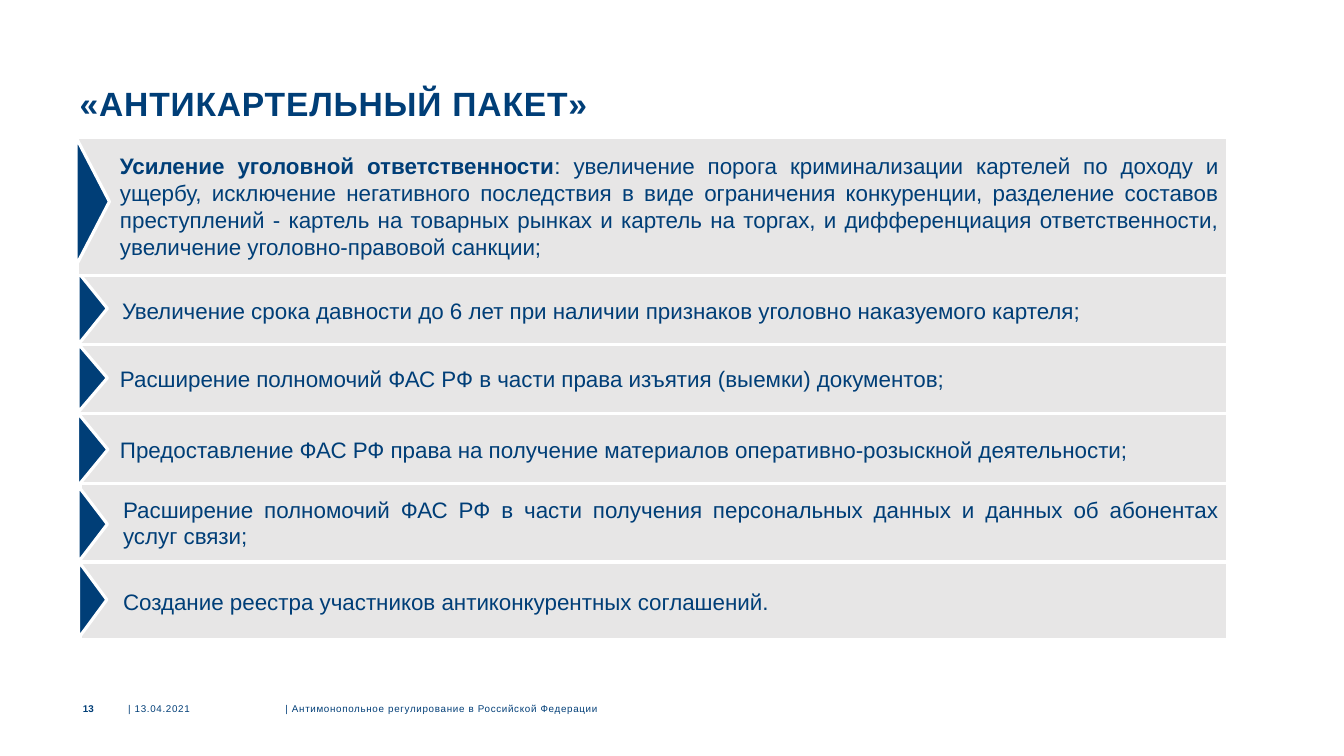
from lxml import etree
from pptx import Presentation
from pptx.dml.color import RGBColor
from pptx.enum import shapes, text
from pptx.util import Inches, Pt

# Content
TITLE = "«АНТИКАРТЕЛЬНЫЙ ПАКЕТ»"

# Footer: runs, left, width, format
FOOTER = [
    ("13", 0.79, 0.14, dict(bold=True, align=text.PP_ALIGN.RIGHT)),
    ("| 13.04.2021", 1.27, 1.56, dict(spacing=0.5)),
    ("| Антимонопольное регулирование в Российской Федерации", 2.83, 6.02,
     dict(spacing=0.5)),
]

# Measures: bold lead, text, (bar left, top, height), (marker middle, span, depth)
MEASURES = [
    ("", "Увеличение срока давности до 6 лет при наличии признаков "
     "уголовно наказуемого картеля;",
     (0.79, 2.73, 0.70), (3.06, 0.72, 0.29)),
    ("", "Расширение полномочий ФАС РФ в части права изъятия (выемки) документов;",
     (0.77, 3.42, 0.68), (3.75, 0.68, 0.29)),
    ("", "Предоставление ФАС РФ права на получение материалов "
     "оперативно-розыскной деятельности;",
     (0.77, 4.10, 0.71), (4.46, 0.73, 0.30)),
    ("", "Расширение полномочий ФАС РФ в части получения персональных данных "
     "и данных об абонентах услуг связи;",
     (0.80, 4.80, 0.77), (5.20, 0.76, 0.29)),
    ("", "Создание реестра участников антиконкурентных соглашений.",
     (0.80, 5.58, 0.77), (5.95, 0.76, 0.28)),
    ("Усиление уголовной ответственности",
     ": увеличение порога криминализации картелей по доходу и ущербу, "
     "исключение негативного последствия в виде ограничения конкуренции, "
     "разделение составов преступлений - картель на товарных рынках и картель "
     "на торгах, и дифференциация ответственности, увеличение "
     "уголовно-правовой санкции;",
     (0.77, 1.36, 1.37), (2.00, 1.27, 0.33)),
]

THEME = dict(
    font="Arial", navy=RGBColor(0x00, 0x3E, 0x77),
    grey=RGBColor(0xE7, 0xE6, 0xE6), white=RGBColor(0xFF, 0xFF, 0xFF),
    title=24, body=16, footer=7, outline=2.25,
)
BAR_RIGHT = 12.18
MARKER_CENTRE = 0.92
BAR_INSETS = (0.42, 0.05, 0.09, 0.05)


def write(shape, words, size, lead="", bold=False, spacing=0, line=None,
          align=text.PP_ALIGN.LEFT, anchor=text.MSO_ANCHOR.MIDDLE,
          insets=(0, 0, 0, 0)):
    frame = shape.text_frame
    frame.word_wrap = True
    frame.vertical_anchor = anchor
    (frame.margin_left, frame.margin_top,
     frame.margin_right, frame.margin_bottom) = map(Inches, insets)
    paragraph = frame.paragraphs[0]
    paragraph.alignment = align
    if line:
        paragraph.line_spacing = Pt(line)
    for part, heavy in ((lead, True), (words, bold)):
        if not part:
            continue
        run = paragraph.add_run()
        run.text = part
        font = run.font
        font.name, font.size, font.bold = THEME["font"], Pt(size), heavy
        font.color.rgb = THEME["navy"]
        if spacing:
            run._r.get_or_add_rPr().set("spc", str(round(spacing * 100)))


def add_label(slide, words, box, size, **style):
    write(slide.shapes.add_textbox(*map(Inches, box)), words, size, **style)


def add_block(slide, kind, box, fill):
    block = slide.shapes.add_shape(kind, *map(Inches, box))
    block.shadow.inherit = False
    block.fill.solid()
    block.fill.fore_color.rgb = fill
    block.line.color.rgb = THEME["white"]
    block.line.width = Pt(THEME["outline"])
    return block


def main():
    deck = Presentation()
    deck.slide_width, deck.slide_height = Inches(13.33), Inches(7.5)
    slide = deck.slides.add_slide(deck.slide_layouts[6])

    # Title and footer
    add_label(slide, TITLE, (0.79, 0.79, 11.76, 0.87), THEME["title"], bold=True,
              spacing=0.6, line=31, anchor=text.MSO_ANCHOR.TOP)
    for words, left, width, style in FOOTER:
        add_label(slide, words, (left, 6.95, width, 0.16), THEME["footer"], **style)

    # Measures: grey bar with a triangle turned to point right
    for lead, words, (left, top, height), (middle, span, depth) in MEASURES:
        bar = add_block(slide, shapes.MSO_SHAPE.RECTANGLE,
                        (left, top, BAR_RIGHT - left, height), THEME["grey"])
        write(bar, words, THEME["body"], lead=lead,
              align=text.PP_ALIGN.JUSTIFY, insets=BAR_INSETS)
        marker = add_block(slide, shapes.MSO_SHAPE.ISOSCELES_TRIANGLE,
                           (MARKER_CENTRE - span / 2, middle - depth / 2, span, depth),
                           THEME["navy"])
        marker.rotation = 90

    deck.save("out.pptx")


if __name__ == "__main__":
    main()
